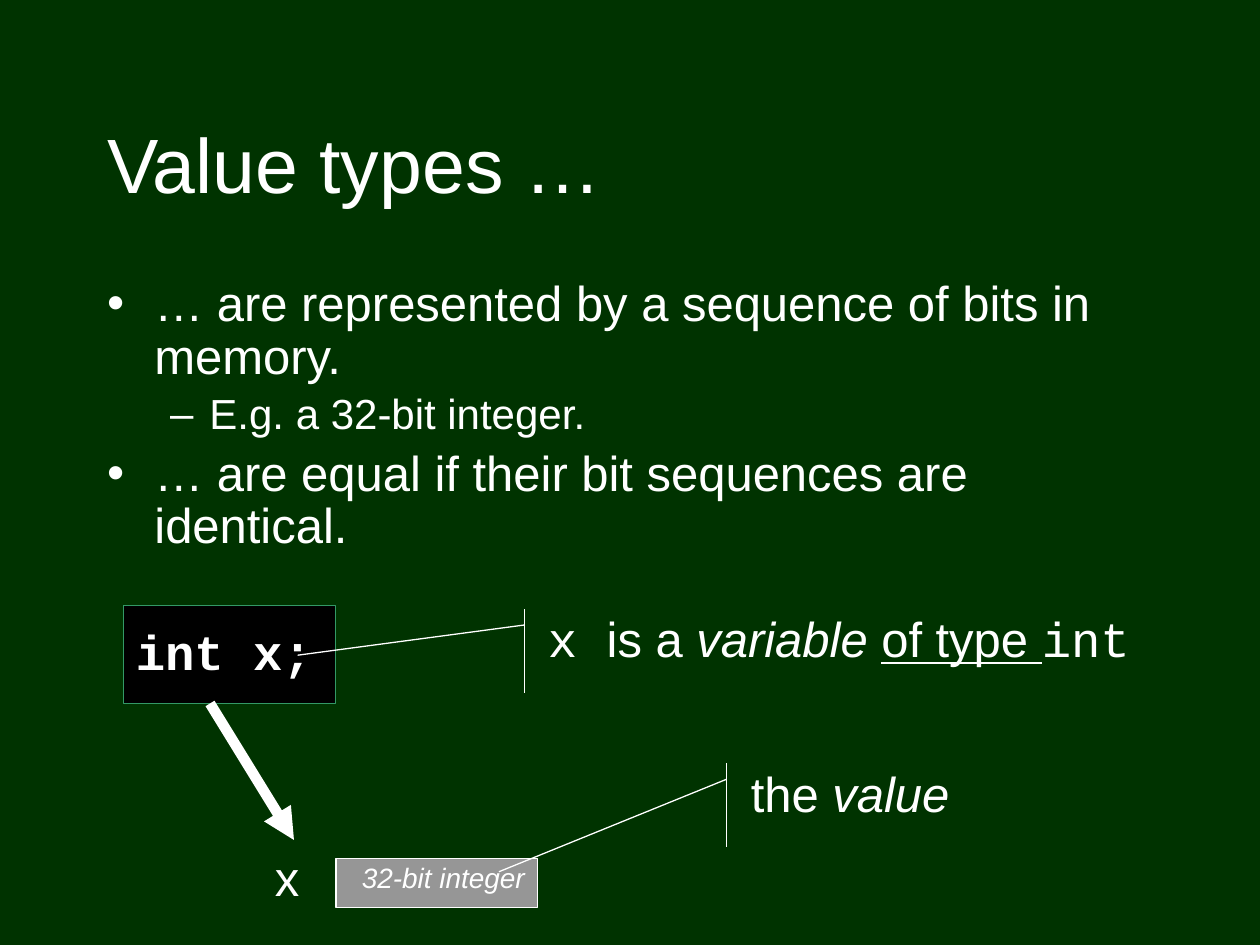
from dataclasses import dataclass

import pptx
import pptx.util
import pptx.dml.color
import pptx.enum.shapes
import pptx.enum.text
import pptx.oxml
import pptx.oxml.ns

Pt = pptx.util.Pt
Shape = pptx.enum.shapes.MSO_SHAPE
Align = pptx.enum.text.PP_ALIGN
Anchor = pptx.enum.text.MSO_ANCHOR


@dataclass(frozen=True)
class Theme:
    back: str = "003300"
    ink: str = "FFFFFF"
    code: str = "000000"
    edge: str = "339966"
    value: str = "969696"
    sans: str = "Arial"
    mono: str = "Courier New"
    head: int = 44
    main: int = 28
    sub: int = 24
    small: int = 16
    thin: float = 0.75


THEME = Theme()


def color(code):
    return pptx.dml.color.RGBColor.from_string(code)


def tag(parent, name, **attrs):
    """Append a drawing element to parent."""
    child = pptx.oxml.parse_xml(f"<a:{name} {pptx.oxml.ns.nsdecls('a')}/>")
    for key, val in attrs.items():
        child.set(key, str(val))
    parent.append(child)


def place(shape, left, top, width, height):
    shape.left, shape.top = Pt(left), Pt(top)
    shape.width, shape.height = Pt(width), Pt(height)


def write(para, *runs, size=THEME.main, font=THEME.sans, bold=False,
          align=Align.LEFT, line=0.9, gap=0.2):
    """Fill para with runs: plain strings, or (text, font changes) pairs."""
    para.alignment = align
    para.line_spacing = line
    para.space_before = Pt(gap * size)
    for item in runs:
        text, more = (item, {}) if isinstance(item, str) else item
        run = para.add_run()
        run.text = text
        look = {"name": font, "size": Pt(size), "bold": bold, **more}
        for key, val in look.items():
            setattr(run.font, key, val)
        run.font.color.rgb = color(THEME.ink)


def frame(shape, wrap=True, anchor=Anchor.TOP):
    """Set up the text frame and return its first paragraph."""
    area = shape.text_frame
    area.word_wrap = wrap
    area.auto_size = pptx.enum.text.MSO_AUTO_SIZE.NONE
    area.vertical_anchor = anchor
    return area.paragraphs[0]


def bullet(para, text, level=0):
    mark, left, hang, size = (("•", 27, 27, THEME.main),
                              ("–", 58.5, 22.5, THEME.sub))[level]
    para.level = level
    write(para, text, size=size)
    props = para._p.get_or_add_pPr()
    props.set("marL", str(Pt(left)))
    props.set("indent", str(-Pt(hang)))
    tag(props, "buFont", typeface=THEME.sans)
    tag(props, "buChar", char=mark)


def outline(slide, kind, spot, edge=THEME.ink, fill=None):
    shape = slide.shapes.add_shape(kind, *map(Pt, spot))
    shape.shadow.inherit = False
    if fill:
        shape.fill.solid()
        shape.fill.fore_color.rgb = color(fill)
    else:
        shape.fill.background()
    shape.line.color.rgb = color(edge)
    shape.line.width = Pt(THEME.thin)
    return shape


def callout(slide, spot, tips, *runs):
    """Add a note with an accent bar; tips are y, x, y, x of its leader."""
    shape = outline(slide, Shape.LINE_CALLOUT_1_ACCENT_BAR, spot)
    for num, tip in enumerate(tips):
        shape.adjustments[num] = tip
    write(frame(shape), *runs)


def arrow(slide, start, end, width):
    line = slide.shapes.add_connector(
        pptx.enum.shapes.MSO_CONNECTOR.STRAIGHT, *map(Pt, start + end))
    line.line.color.rgb = color(THEME.ink)
    line.line.width = Pt(width)
    tag(line.line._get_or_add_ln(), "tailEnd", type="triangle")
    tag(line._element.spPr, "effectLst")


def main():
    deck = pptx.Presentation()
    deck.slide_width, deck.slide_height = Pt(720), Pt(540)
    slide = deck.slides.add_slide(deck.slide_layouts[1])
    slide.background.fill.solid()
    slide.background.fill.fore_color.rgb = color(THEME.back)

    title, body = slide.placeholders
    place(title, 54, 48, 612, 90)
    write(frame(title, anchor=Anchor.MIDDLE), "Value types …",
          size=THEME.head, line=1, gap=0)

    place(body, 54, 156, 612, 166.5)
    bullet(frame(body), "… are represented by a sequence of bits in memory.")
    for text, level in (
            ("E.g. a 32-bit integer.", 1),
            ("… are equal if their bit sequences are identical.", 0)):
        bullet(body.text_frame.add_paragraph(), text, level)

    code = outline(slide, Shape.RECTANGLE, (70.5, 346, 121.25, 56),
                   THEME.edge, THEME.code)
    write(frame(code, wrap=False, anchor=Anchor.MIDDLE), "int x;",
          font=THEME.mono, bold=True)

    name = slide.shapes.add_textbox(*map(Pt, (150, 484.5, 28.5, 37.5)))
    write(frame(name, wrap=False), "x")

    value = outline(slide, Shape.RECTANGLE, (192, 490.5, 115, 28),
                    fill=THEME.value)
    write(frame(value, wrap=False), ("32-bit integer", {"italic": True}),
          size=THEME.small, align=Align.RIGHT)

    arrow(slide, (120, 402), (168, 480), 6)

    callout(slide, (422, 436.25, 232, 48), (0.19, -0.03, 1.29, -0.59),
            "the ", ("value", {"italic": True}))
    callout(slide, (306, 348, 384, 48), (0.19, -0.016, 0.55, -0.354),
            ("x ", {"name": THEME.mono}), "is a ",
            ("variable ", {"italic": True}),
            ("of type ", {"underline": True}),
            ("int", {"name": THEME.mono}))

    deck.save("out.pptx")


if __name__ == "__main__":
    main()
